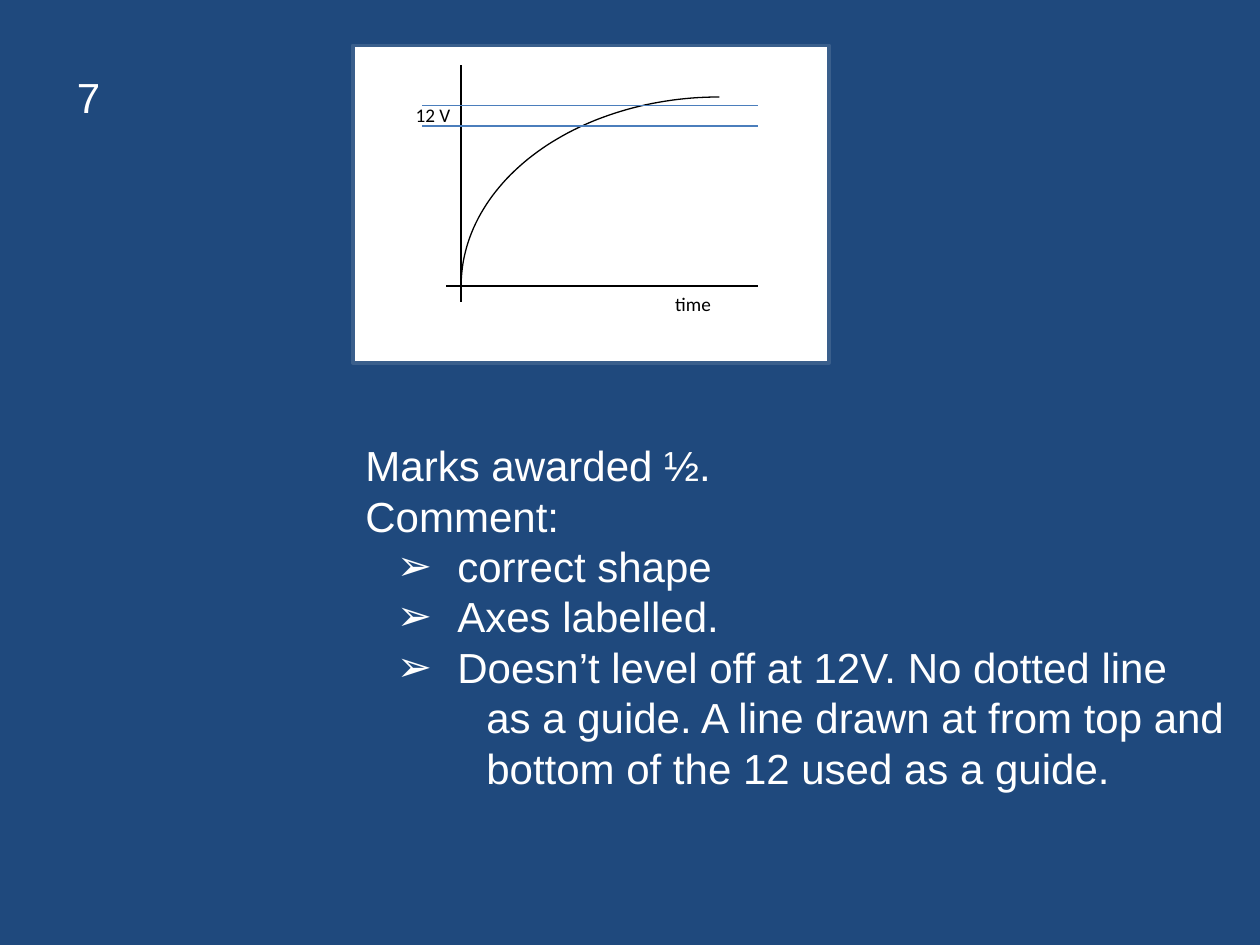
import math
from dataclasses import dataclass

from lxml import etree
from pptx import Presentation
from pptx import util as u
from pptx.dml.color import RGBColor
from pptx.enum import shapes, text
from pptx.oxml import ns

NAVY = RGBColor(0x1F, 0x49, 0x7D)
WHITE = RGBColor(0xFF, 0xFF, 0xFF)
BLACK = RGBColor(0, 0, 0)
FRAME_BLUE = RGBColor(0x3A, 0x5F, 0x8C)
GUIDE_BLUE = RGBColor(0x4B, 0x7E, 0xBC)

ORIGIN_X, ORIGIN_Y = 3.66, 2.27
CURVE_WIDTH, CURVE_HEIGHT = 2.05, 1.5
CURVE_STEPS = 60


@dataclass
class Segment:
    x1: float
    y1: float
    x2: float
    y2: float
    color: RGBColor


@dataclass
class Label:
    wording: str
    x: float
    y: float
    width: float
    height: float


@dataclass
class Remark:
    wording: str
    level: int = 0
    margin: float = 0
    indent: float = 0
    bullet: str = ""


AXES = [
    Segment(ORIGIN_X, 0.52, ORIGIN_X, 2.4, BLACK),
    Segment(3.54, ORIGIN_Y, 6.02, ORIGIN_Y, BLACK),
]
GUIDES = [Segment(3.35, y, 6.02, y, GUIDE_BLUE) for y in (0.84, 1)]
AXIS_LABELS = [
    Label("12 V", 3.2, 0.77, 0.55, 0.33),
    Label("time", 5.26, 2.27, 0.76, 0.33),
]
POINTS = ["correct shape", "Axes labelled.", "Doesn’t level off at 12V. No dotted line"]
REMARKS = [
    Remark("Marks awarded ½."),
    Remark("Comment:"),
    *(Remark(point, 1, 0.73, -0.48, "➢") for point in POINTS),
    Remark("as a guide. A line drawn at from top and bottom of the 12 used as a guide.", 1, 0.96),
]


def place(shape, x: float, y: float, width: float, height: float) -> None:
    shape.left, shape.top = u.Inches(x), u.Inches(y)
    shape.width, shape.height = u.Inches(width), u.Inches(height)


def write(paragraph, wording: str, *, font: str = "Arial", size: float = 24,
          color: RGBColor = WHITE, after: float = 0) -> None:
    paragraph.alignment = text.PP_ALIGN.LEFT
    paragraph.space_before = u.Pt(0)
    paragraph.space_after = u.Pt(after)
    run = paragraph.add_run()
    run.text = wording
    run.font.name = font
    run.font.size = u.Pt(size)
    run.font.color.rgb = color


def set_bullet(paragraph, remark: Remark) -> None:
    properties = paragraph._p.get_or_add_pPr()
    properties.set("marL", str(u.Inches(remark.margin)))
    properties.set("indent", str(u.Inches(remark.indent)))
    if remark.bullet:
        etree.SubElement(properties, ns.qn("a:buFont"), typeface="Arial")
        etree.SubElement(properties, ns.qn("a:buChar"), char=remark.bullet)
    else:
        etree.SubElement(properties, ns.qn("a:buNone"))


def draw_segment(parent, segment: Segment) -> None:
    line = parent.add_connector(
        shapes.MSO_CONNECTOR.STRAIGHT,
        u.Inches(segment.x1), u.Inches(segment.y1),
        u.Inches(segment.x2), u.Inches(segment.y2))
    line.line.color.rgb = segment.color
    line.line.width = u.Pt(0.75)
    etree.SubElement(line._element.spPr, ns.qn("a:effectLst"))


def draw_label(parent, label: Label) -> None:
    box = parent.add_textbox(u.Inches(label.x), u.Inches(label.y),
                             u.Inches(label.width), u.Inches(label.height))
    box.text_frame.word_wrap = True
    write(box.text_frame.paragraphs[0], label.wording,
          font="Calibri", size=11, color=BLACK, after=10)


def draw_curve(parent) -> None:
    angles = [math.pi / 2 * step / CURVE_STEPS for step in range(CURVE_STEPS + 1)]
    points = [(u.Inches(ORIGIN_X + CURVE_WIDTH * (1 - math.cos(angle))),
               u.Inches(ORIGIN_Y - CURVE_HEIGHT * math.sin(angle))) for angle in angles]
    builder = parent.build_freeform(*points[0])
    builder.add_line_segments(points[1:], close=False)
    curve = builder.convert_to_shape()
    curve.fill.background()
    curve.line.color.rgb = BLACK
    curve.line.width = u.Pt(0.75)
    curve.shadow.inherit = False


def main() -> None:
    deck = Presentation()
    deck.slide_width, deck.slide_height = u.Inches(10), u.Inches(7.5)
    slide = deck.slides.add_slide(deck.slide_layouts[1])
    slide.background.fill.solid()
    slide.background.fill.fore_color.rgb = NAVY

    number = slide.shapes.title
    place(number, 0.51, 0.52, 0.39, 0.5)
    number.text_frame.word_wrap = False
    number.text_frame.auto_size = text.MSO_AUTO_SIZE.SHAPE_TO_FIT_TEXT
    number.text_frame.vertical_anchor = text.MSO_ANCHOR.TOP
    write(number.text_frame.paragraphs[0], "7")

    feedback = slide.placeholders[1]
    place(feedback, 2.8, 3.44, 7.2, 2.93)
    feedback.text_frame.word_wrap = True
    feedback.text_frame.auto_size = text.MSO_AUTO_SIZE.SHAPE_TO_FIT_TEXT
    for index, remark in enumerate(REMARKS):
        frame = feedback.text_frame
        paragraph = frame.add_paragraph() if index else frame.paragraphs[0]
        paragraph.level = remark.level
        write(paragraph, remark.wording)
        set_bullet(paragraph, remark)

    panel = slide.shapes.add_shape(
        shapes.MSO_SHAPE.RECTANGLE,
        u.Inches(2.8), u.Inches(0.36), u.Inches(3.78), u.Inches(2.52))
    panel.fill.solid()
    panel.fill.fore_color.rgb = WHITE
    panel.line.color.rgb = FRAME_BLUE
    panel.line.width = u.Pt(2)
    panel.shadow.inherit = False

    graph = slide.shapes.add_group_shape().shapes
    for axis in AXES:
        draw_segment(graph, axis)
    for label in AXIS_LABELS:
        draw_label(graph, label)
    draw_curve(graph)
    for guide in GUIDES:
        draw_segment(slide.shapes, guide)

    deck.save("out.pptx")


if __name__ == "__main__":
    main()
